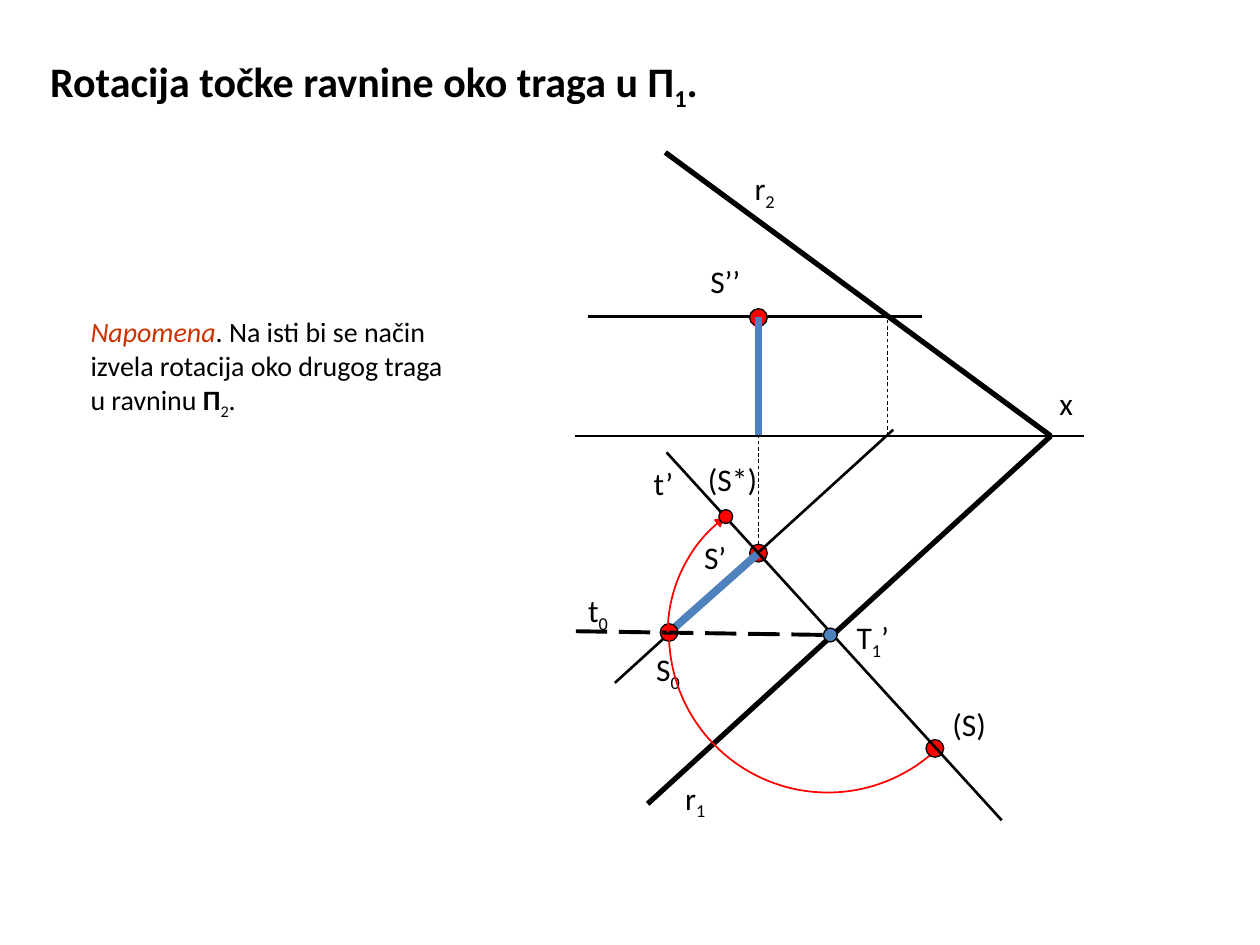
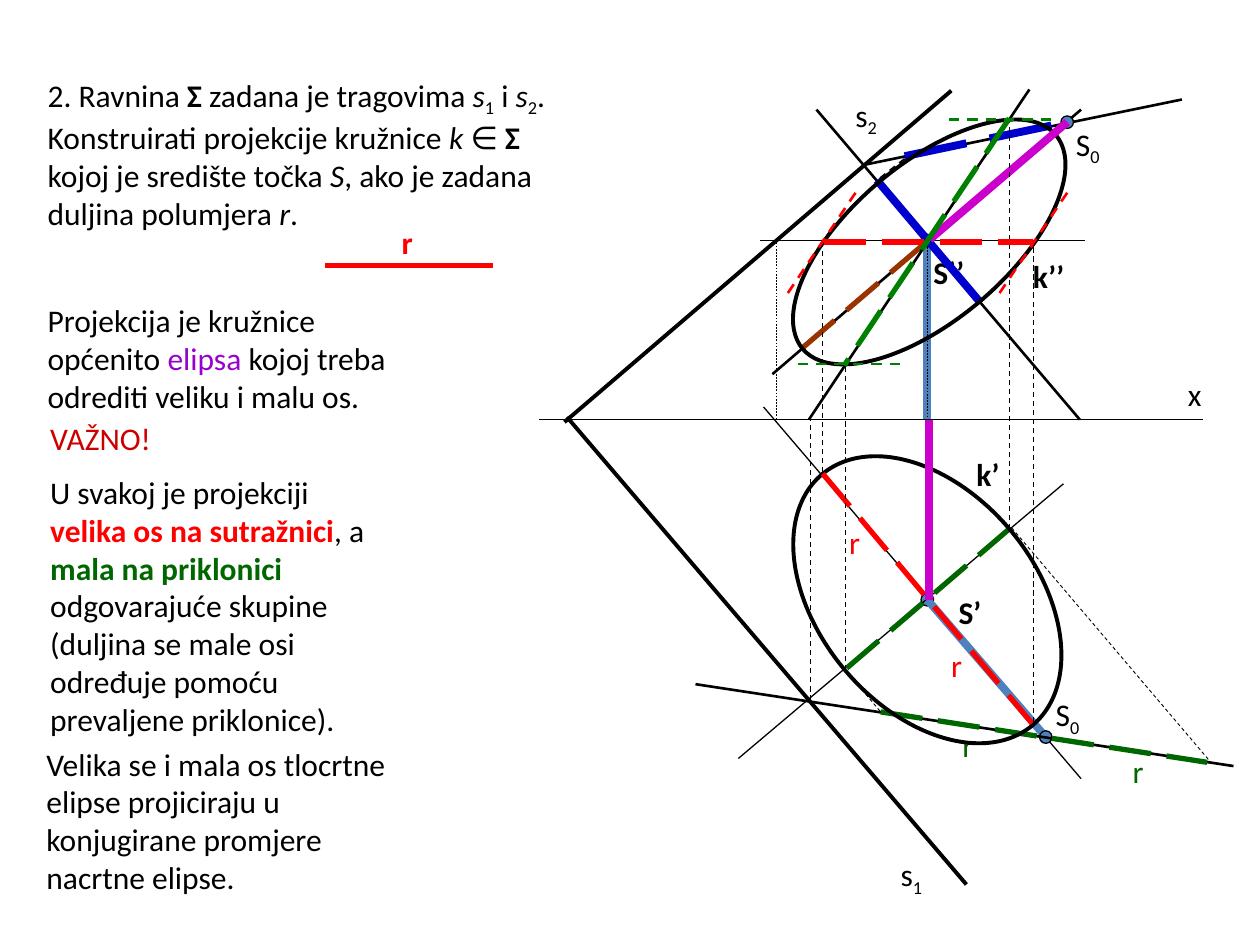
from lxml import etree
from pptx import Presentation
from pptx import util as u
from pptx.dml.color import RGBColor
from pptx.enum import dml, shapes
from pptx.oxml import ns

BLACK, RED, BLUE = "000000", "FF0000", "4F81BD"
GREEN, LEAF, NAVY, PURPLE, BROWN = "006600", "008000", "0000CC", "CC00CC", "993300"
FONT = "Calibri"
THIN, MEDIUM, TRACE, THICK, WIDE = 0.75, 1.5, 2.25, 3, 4.5
DASH, LONG = dml.MSO_LINE.DASH, dml.MSO_LINE.LONG_DASH
BOLD, ITALIC, SUB = {"bold": True}, {"italic": True}, {"baseline": "-25000"}


def rgb(value):
    """Turn a hex string into a colour."""
    return RGBColor.from_string(value)


class Sketch:
    """Hold the style and the current slide, and draw each kind of element."""

    def __init__(self):
        self.presentation = Presentation()
        self.presentation.slide_width = u.Inches(10)
        self.presentation.slide_height = u.Inches(7.5)
        self.slide = None

    def new_slide(self):
        """Start a blank slide."""
        self.slide = self.presentation.slides.add_slide(self.presentation.slide_layouts[6])

    def style_line(self, line, color, width, dash=None):
        """Set the colour, width and dash of a line."""
        line.color.rgb = rgb(color)
        for name, value in {"width": u.Pt(width), "dash_style": dash}.items():
            setattr(line, name, value)

    def line(self, start, end, color=BLACK, width=THIN, dash=None):
        """Draw a straight line between two points."""
        ends = [u.Inches(value) for value in (*start, *end)]
        connector = self.slide.shapes.add_connector(shapes.MSO_CONNECTOR.STRAIGHT, *ends)
        self.style_line(connector.line, color, width, dash)
        etree.SubElement(connector._element.spPr, ns.qn("a:effectLst"))

    def shape(self, kind, box, fill=None, color=BLACK, width=THIN, rotation=0):
        """Draw a preset shape, hollow unless a fill is given."""
        shape = self.slide.shapes.add_shape(kind, *map(u.Inches, box))
        shape.shadow.inherit = False
        shape.rotation = rotation
        if fill:
            shape.fill.solid()
            shape.fill.fore_color.rgb = rgb(fill)
        else:
            shape.fill.background()
        self.style_line(shape.line, color, width)
        return shape

    def dot(self, center, fill=BLUE, size=0.1):
        """Mark a point."""
        left, top = (value - size / 2 for value in center)
        self.shape(shapes.MSO_SHAPE.OVAL, (left, top, size, size), fill)

    def ellipse(self, box, rotation):
        """Draw a rotated ellipse outline."""
        self.shape(shapes.MSO_SHAPE.OVAL, box, width=TRACE, rotation=rotation)

    def arc(self, center, radius, start, end, arrow=False):
        """Draw a clockwise circular arc between two angles in degrees."""
        left, top = (value - radius for value in center)
        box = (left, top, 2 * radius, 2 * radius)
        shape = self.shape(shapes.MSO_SHAPE.ARC, box, color=RED, width=1)
        for index, angle in enumerate((start, end)):
            shape.adjustments[index] = angle * 0.6
        if arrow:
            outline = shape.line._get_or_add_ln()
            etree.SubElement(outline, ns.qn("a:tailEnd"), type="triangle")

    def text(self, box, *paragraphs, size=18):
        """Write paragraphs, each a list of (wording, format) runs."""
        frame = self.slide.shapes.add_textbox(*map(u.Inches, box)).text_frame
        frame.word_wrap = True
        for index, runs in enumerate(paragraphs):
            paragraph = frame.add_paragraph() if index else frame.paragraphs[0]
            paragraph.space_before = u.Pt(size / 2 if index else 0)
            for wording, changes in runs:
                self.run(paragraph, wording, size, changes)

    def run(self, paragraph, wording, size, changes):
        """Add one formatted run."""
        run = paragraph.add_run()
        run.text = wording
        values = {"name": FONT, "size": u.Pt(size), "color": BLACK, **changes}
        run.font.color.rgb = rgb(values.pop("color"))
        if "baseline" in values:
            run._r.get_or_add_rPr().set("baseline", values.pop("baseline"))
        for name, value in values.items():
            setattr(run.font, name, value)

    def label(self, name, left, top, width=0.6, **changes):
        """Write a short name; the letter after an underscore is a subscript."""
        base, _, tail = name.partition("_")
        runs = [(base, changes), (tail[:1], {**changes, **SUB}), (tail[1:], changes)]
        self.text((left, top, width, 0.37), [run for run in runs if run[0]])


def draw_rotation(sketch):
    """Rotate a point of the plane about its first trace."""
    sketch.new_slide()
    sketch.text((0.3, 0.39, 7.05, 1.09), [
        ("Rotacija točke ravnine oko traga u Π", BOLD), ("1", {**BOLD, **SUB}), (".", BOLD)], size=24)
    vertex, top_view, front_view = (8.34, 3.46), (6.02, 4.39), (6.02, 2.52)
    lowered, turned, center = (5.31, 5.02), (7.42, 5.94), (6.59, 5.04)
    sketch.line((4.56, 3.46), (8.6, 3.46))
    for end in ((5.28, 1.21), (5.14, 6.38)):
        sketch.line(vertex, end, width=THICK)
    sketch.label("r_2", 5.89, 1.29)
    sketch.label("r_1", 5.34, 6.13)
    sketch.label("x", 8.31, 3)
    sketch.dot(top_view, RED, 0.14)
    sketch.label("S’", 5.49, 4.22)
    sketch.line((4.88, 5.42), (7.09, 3.41), width=MEDIUM)
    sketch.line((7.04, 3.46), (7.04, 2.5), width=0.5, dash=DASH)
    sketch.line((4.67, 2.51), (7.32, 2.51), width=MEDIUM)
    sketch.dot(front_view, RED, 0.14)
    sketch.line((6.02, 4.32), (6.02, 2.57), width=0.5, dash=DASH)
    sketch.label("S’’", 5.54, 2.03)
    sketch.line(front_view, (6.02, 3.45), BLUE, WIDE)
    sketch.line(top_view, lowered, BLUE, WIDE)
    sketch.dot(lowered, RED, 0.14)
    sketch.label("S_0", 5.11, 5.11)
    sketch.arc((6.57, 5.03), 1.26, 47.6, 178)
    sketch.label("(S)", 7.46, 5.55)
    sketch.dot(turned, RED, 0.14)
    sketch.text((0.62, 2.45, 3.09, 0.91), [
        ("Napomena", {"color": "CC3300", **ITALIC}),
        (". Na isti bi se način izvela rotacija oko drugog traga u ravninu ", {}),
        ("Π", BOLD), ("2", SUB), (".", {})], size=16)
    sketch.line((5.29, 3.59), (7.95, 6.51), width=MEDIUM)
    sketch.label("t’", 5.09, 3.63)
    sketch.line((4.57, 5.01), center, width=TRACE, dash=LONG)
    sketch.label("t_0", 4.57, 4.64)
    sketch.arc((6.45, 5.02), 1.15, 180, 232.8, arrow=True)
    sketch.dot((5.76, 4.1), RED, 0.11)
    sketch.label("(S*)", 5.52, 3.6, 0.8)
    sketch.dot(center, BLUE, 0.11)
    sketch.label("T_1’", 6.7, 4.86)


def write_task(sketch):
    """Write the task and the notes beside the construction."""
    sketch.text((0.28, 0.55, 4.22, 1.31), [
        ("2. Ravnina ", {}), ("Σ", BOLD), (" zadana je tragovima ", {}),
        ("s", ITALIC), ("1", SUB), (" i ", {}), ("s", ITALIC), ("2", SUB),
        (". Konstruirati projekcije kružnice ", {}), ("k ", ITALIC), ("∈ ", {}), ("Σ", BOLD),
        (" kojoj je središte točka ", {}), ("S", ITALIC),
        (", ako je zadana duljina polumjera ", {}), ("r", ITALIC), (".", {})])
    sketch.line((2.58, 2.11), (3.91, 2.11), RED, THICK)
    sketch.label("r", 3.09, 1.72, color=RED, bold=True)
    sketch.text((0.28, 2.34, 3.03, 0.9), [
        ("Projekcija je kružnice općenito ", {}), ("elipsa", {"color": "9900CC"}),
        (" kojoj treba odrediti veliku i malu os.", {})])
    sketch.text((0.3, 3.28, 2.88, 2.68), [("VAŽNO!", {"color": "CC0000"})], [
        ("U svakoj je projekciji ", {}),
        ("velika os na sutražnici", {"color": RED, **BOLD}), (", a ", {}),
        ("mala na priklonici", {"color": GREEN, **BOLD}),
        (" odgovarajuće skupine (duljina se male osi određuje pomoću prevaljene priklonice).", {})])
    sketch.text((0.27, 5.86, 3.12, 1.31), [
        ("Velika se i mala os tlocrtne elipse projiciraju u konjugirane promjere nacrtne elipse.", {})])


def draw_circle(sketch):
    """Construct both projections of a circle in the plane."""
    sketch.new_slide()
    top_center, front_center = (7.36, 4.76), (7.36, 1.91)
    top_lowered, front_lowered = (8.3, 5.85), (8.47, 0.97)
    sketch.line(front_center, (7.36, 3.33), BLUE, WIDE)
    write_task(sketch)
    sketch.line((4.28, 3.33), (9.55, 3.33))
    sketch.line((7.55, 0.72), (4.48, 3.35), width=TRACE)
    sketch.line((4.5, 3.31), (7.67, 7.02), width=TRACE)
    sketch.label("x", 9.33, 2.93, 0.28)
    sketch.label("s_2", 6.69, 0.71)
    sketch.label("s_1", 7.05, 6.74)
    sketch.dot(front_center)
    sketch.label("S’’", 7.31, 1.96, bold=True)
    sketch.line((6.03, 1.91), (8.61, 1.91))
    sketch.line((6.16, 1.9), (6.16, 3.34), width=0.25, dash=DASH)
    sketch.line((6.06, 3.23), (8.58, 6.18))
    sketch.dot(top_center)
    sketch.line((7.36, 1.96), (7.36, 4.73), width=0.25, dash=DASH)
    sketch.label("S’", 7.51, 4.66, bold=True)
    sketch.line((5.86, 6.02), (8.44, 3.84))
    sketch.line(top_center, top_lowered, BLUE, WIDE)
    sketch.dot(top_lowered)
    sketch.label("S_0", 8.28, 5.47)
    sketch.line((5.52, 5.43), (9.79, 6.08), width=MEDIUM)
    sketch.line((6.99, 5.65), (9.58, 6.05), GREEN, THICK, LONG)
    for left, top in ((7.54, 5.71), (8.89, 5.92)):
        sketch.label("r", left, top, color=GREEN)
    sketch.line((8.03, 4.19), (9.61, 6.05), width=0.5, dash=DASH)
    sketch.line((6.71, 5.32), (6.99, 5.65), width=0.5, dash=DASH)
    sketch.line((8.02, 4.19), (6.7, 5.32), GREEN, THICK, LONG)
    sketch.ellipse((6.06, 3.9, 2.6, 1.72), 50)
    sketch.label("k’", 7.65, 3.56, bold=True)
    sketch.line((8.58, 0.87), (6.13, 2.97), width=MEDIUM)
    sketch.line((6.48, 0.87), (8.57, 3.33), width=MEDIUM)
    sketch.line((6.53, 3.76), (8.19, 5.74), RED, THICK, LONG)
    for left, top in ((6.64, 4.1), (7.45, 5.08)):
        sketch.label("r", left, top, color=RED)
    sketch.line((6.37, 2.76), (8.36, 1.06), BROWN, THICK, LONG)
    sketch.line((7.37, 3.33), (7.37, 4.76), PURPLE, WIDE)
    sketch.line((6.85, 1.31), (9.38, 0.79), width=MEDIUM)
    sketch.line((7.18, 1.24), front_lowered, NAVY, WIDE, LONG)
    sketch.line((7.18, 1.26), (6.95, 1.44), width=1, dash=DASH)
    sketch.dot(front_lowered)
    sketch.label("S_0", 8.44, 0.94)
    sketch.line((6.96, 1.43), (7.78, 2.4), NAVY, WIDE)
    sketch.ellipse((6.06, 1.3, 2.63, 1.24), 319.8)
    sketch.label("k’’", 8.1, 1.99, bold=True)
    sketch.line((7.38, 1.9), front_lowered, PURPLE, WIDE)
    for x, bottom, top in ((6.53, 3.75, 1.93), (8.2, 5.73, 1.92), (6.43, 5.56, 3.33),
                           (6.71, 5.32, 2.89), (8.01, 4.2, 0.95)):
        sketch.line((x, bottom), (x, top), dash=DASH)
    sketch.line((6.54, 1.92), (8.2, 1.92), RED, THICK, LONG)
    sketch.line((6.42, 3.33), (8.17, 0.71), width=MEDIUM)
    sketch.line((8.01, 0.94), (6.7, 2.9), LEAF, THICK, LONG)
    for left, y in ((6.33, 2.89), (7.53, 0.95)):
        sketch.line((left, y), (left + 0.85, y), LEAF, MEDIUM, DASH)
    for right in (6.79, 8.47):
        sketch.line((right, 1.53), (right - 0.56, 2.36), RED, MEDIUM, DASH)


def main():
    """Build and save both slides."""
    sketch = Sketch()
    draw_rotation(sketch)
    draw_circle(sketch)
    sketch.presentation.save("out.pptx")


if __name__ == "__main__":
    main()
